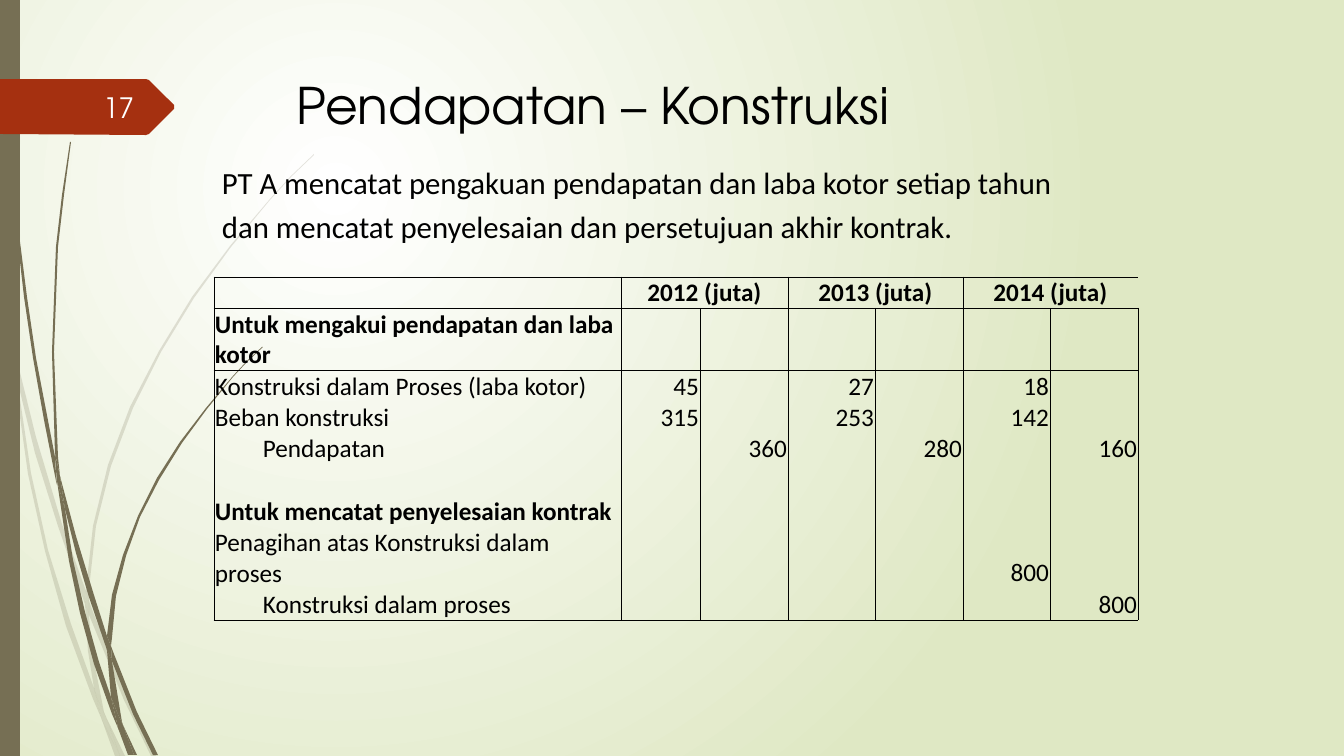
"""Build a slide on construction revenue with a journal table and grass decoration."""
import pptx
import pptx.dml.color
import pptx.enum.shapes
import pptx.enum.text
import pptx.oxml
import pptx.oxml.ns
import pptx.util

PX = 12192000 / 1344
COLORS = {"text": "000000", "white": "FFFFFF", "sage": "DFE8C4", "olive": "766F54", "rust": "A53010"}
HEADING_FONT, BODY_FONT = "TeX Gyre Adventor", "Calibri"
ALIGN = pptx.enum.text.PP_ALIGN
ANCHOR = pptx.enum.text.MSO_ANCHOR
DRAWING = pptx.oxml.ns.nsdecls("a")


def px(*lengths):
    return [pptx.util.Emu(round(length * PX)) for length in lengths]


def format_para(para, size, font, color="text", align=ALIGN.LEFT, bold=False):
    para.alignment = align
    para.font.size = pptx.util.Pt(size)
    para.font.name = font
    para.font.bold = bold
    para.font.color.rgb = pptx.dml.color.RGBColor.from_string(COLORS[color])


deck = pptx.Presentation()
deck.slide_width, deck.slide_height = px(1344, 756)
page = deck.slides.add_slide(deck.slide_layouts[5])

backdrop = page.background.fill
backdrop.gradient()
for stop, color in zip(backdrop.gradient_stops, ("white", "sage")):
    stop.color.rgb = pptx.dml.color.RGBColor.from_string(COLORS[color])
gradient = page.element.xpath(".//p:bg//a:gradFill")[0]
gradient.remove(gradient.xpath("a:lin")[0])
gradient.append(pptx.oxml.parse_xml(
    f'<a:path {DRAWING} path="circle"><a:fillToRect l="50000" t="50000" r="100000" b="100000"/></a:path>'))

PALE_GRASS = [
    [(11, 353), (9, 325), (0, 284), (0, 301), (10, 347)],
    [(58, 526), (85, 604), (86, 591), (62, 524), (36, 437), (14, 348), (17, 379), (35, 453)],
    [(93, 612), (89, 601), (89, 615), (124, 700), (151, 756), (156, 756), (128, 698)],
    [(120, 756), (125, 756), (106, 717)],
    [(94, 688), (71, 624), (48, 550), (31, 473), (17, 379), (11, 353), (28, 474), (45, 551),
     (66, 626), (93, 699), (102, 720), (100, 713)],
    [(85, 604), (88, 651), (94, 688), (97, 698), (106, 717), (104, 712), (92, 651), (89, 615), (89, 613)],
    [(89, 589), (96, 526), (111, 466), (133, 408), (161, 352), (194, 298), (231, 247), (270, 200),
     (292, 176), (314, 155), (314, 154), (291, 176), (270, 199), (230, 246), (192, 297), (159, 351),
     (130, 407), (108, 465), (93, 526), (86, 589), (86, 591), (89, 601)],
    [(102, 720), (115, 756), (120, 756)],
    [(89, 613), (89, 615), (89, 601), (86, 591), (85, 604)],
    [(97, 698), (94, 688), (100, 713), (102, 720), (120, 756), (106, 717)],
]
DARK_GRASS = [
    [(7, 111), (11, 173), (17, 235), (24, 297), (33, 358), (44, 420), (56, 481), (57, 485), (55, 461),
     (55, 457), (36, 358), (27, 297), (19, 234), (13, 172), (8, 110), (5, 48), (4, 0), (3, 0), (4, 48)],
    [(89, 597), (107, 650), (107, 636), (94, 595), (76, 536), (60, 476), (65, 509), (76, 553)],
    [(114, 654), (111, 646), (112, 661), (133, 714), (153, 755), (158, 755), (137, 712)],
    [(111, 697), (99, 662), (85, 612), (73, 560), (65, 509), (57, 481), (69, 561), (80, 613),
     (94, 664), (112, 714), (118, 728), (117, 723)],
    [(60, 476), (58, 457), (54, 352), (58, 247), (64, 195), (71, 142), (70, 142), (62, 195),
     (56, 247), (52, 352), (55, 453)],
    [(134, 755), (137, 755), (123, 725)],
    [(57, 481), (65, 509), (60, 476), (55, 453), (55, 457)],
    [(112, 638), (116, 596), (126, 556), (140, 517), (159, 480), (182, 443), (207, 409), (233, 377),
     (247, 362), (263, 347), (262, 347), (247, 361), (233, 376), (206, 408), (180, 442), (157, 478),
     (138, 516), (123, 555), (112, 595), (107, 636), (111, 646)],
    [(118, 728), (128, 755), (132, 755)],
    [(107, 650), (111, 697), (117, 712), (123, 725), (122, 722), (112, 661), (110, 656)],
    [(107, 650), (110, 656), (112, 661), (111, 646), (107, 636)],
    [(117, 712), (111, 697), (117, 723), (118, 728), (131, 755), (134, 755), (123, 725)],
]
SIDE_BAR = [(0, 0), (20, 0), (20, 756), (0, 756)]
NUMBER_TAG = [(174, 109), (149, 134), (146, 135), (0, 134), (0, 79), (146, 79), (149, 80), (174, 105)]

outlines = [(points, "olive", 20) for points in PALE_GRASS]
outlines += [(points, "olive", 100) for points in DARK_GRASS]
outlines += [(SIDE_BAR, "olive", 100), (NUMBER_TAG, "rust", 100)]
for points, color, opacity in outlines:
    if points is SIDE_BAR:
        shape = page.shapes.add_shape(pptx.enum.shapes.MSO_SHAPE.RECTANGLE, *px(0, 0, 20, 756))
    else:
        builder = page.shapes.build_freeform(*points[0], scale=PX)
        builder.add_line_segments(points[1:], close=True)
        shape = builder.convert_to_shape()
    shape.shadow.inherit = False
    shape.line.fill.background()
    shape.fill.solid()
    shape.fill.fore_color.rgb = pptx.dml.color.RGBColor.from_string(COLORS[color])
    if opacity < 100:
        tint = shape.element.xpath("p:spPr/a:solidFill/a:srgbClr")[0]
        tint.append(pptx.oxml.parse_xml(f'<a:alpha {DRAWING} val="{opacity * 1000}"/>'))

title = page.shapes.title
title.left, title.top, title.width, title.height = px(286, 69, 983, 141)
title.text_frame.text = "Pendapatan – Konstruksi"
title.text_frame.auto_size = pptx.enum.text.MSO_AUTO_SIZE.NONE
title.text_frame.vertical_anchor = ANCHOR.TOP
format_para(title.text_frame.paragraphs[0], 36, HEADING_FONT)

number_box = page.shapes.add_textbox(*px(58, 87, 86, 40))
number_box.text_frame.word_wrap = True
number_box.text_frame.vertical_anchor = ANCHOR.MIDDLE
number_box.text_frame.text = "17"
format_para(number_box.text_frame.paragraphs[0], 20, HEADING_FONT, "white", ALIGN.RIGHT)

intro_box = page.shapes.add_textbox(*px(212, 151, 865, 97))
intro_box.text_frame.word_wrap = True
intro_box.text_frame.text = ("PT A mencatat pengakuan pendapatan dan laba kotor setiap tahun "
                             "dan mencatat penyelesaian dan persetujuan akhir kontrak.")
intro_para = intro_box.text_frame.paragraphs[0]
intro_para.line_spacing = 1.2
format_para(intro_para, 22, BODY_FONT)

JOURNAL = [
    ["", "2012 (juta)", "", "2013 (juta)", "", "2014 (juta)", ""],
    ["Untuk mengakui pendapatan dan laba kotor", "", "", "", "", "", ""],
    ["Konstruksi dalam Proses (laba kotor)", "45", "", "27", "", "18", ""],
    ["Beban konstruksi", "315", "", "253", "", "142", ""],
    ["Pendapatan", "", "360", "", "280", "", "160"],
    ["", "", "", "", "", "", ""],
    ["Untuk mencatat penyelesaian kontrak", "", "", "", "", "", ""],
    ["Penagihan atas Konstruksi dalam proses", "", "", "", "", "800", ""],
    ["Konstruksi dalam proses", "", "", "", "", "", "800"],
]
COLUMN_WIDTHS = [407, 79, 88, 87, 88, 87, 88]
HEADER_ROW, BOLD_ROWS, INDENTED_ROWS, WRAPPED_ROWS = 0, (0, 1, 6), (4, 8), (1, 7)
LAST_ROW = len(JOURNAL) - 1
NO_STYLE = "{2D5ABB26-0587-4C30-8999-92F81FD0307C}"

frame = page.shapes.add_table(len(JOURNAL), len(COLUMN_WIDTHS), *px(214, 277, sum(COLUMN_WIDTHS), 341))
table = frame.table
table.first_row = table.horz_banding = False
frame.element.xpath(".//a:tableStyleId")[0].text = NO_STYLE
for column, width in zip(table.columns, COLUMN_WIDTHS):
    column.width = px(width)[0]
for row_index, entries in enumerate(JOURNAL):
    table.rows[row_index].height = px(62 if row_index in WRAPPED_ROWS else 31)[0]
    for column_index, entry in enumerate(entries):
        cell = table.cell(row_index, column_index)
        cell.text = entry
        cell.vertical_anchor = ANCHOR.BOTTOM
        indent = 49 if column_index == 0 and row_index in INDENTED_ROWS else 1
        cell.margin_left, cell.margin_top, cell.margin_right, cell.margin_bottom = px(indent, 1, 1, 0)
        align = ALIGN.LEFT if column_index == 0 else ALIGN.CENTER if row_index == HEADER_ROW else ALIGN.RIGHT
        format_para(cell.text_frame.paragraphs[0], 18, BODY_FONT, "text", align, row_index in BOLD_ROWS)
        edges = {
            "lnL": column_index in (0, 1, 3, 5),
            "lnR": column_index in (0, 2, 4, 6),
            "lnT": row_index in (HEADER_ROW, HEADER_ROW + 1),
            "lnB": row_index in (HEADER_ROW, LAST_ROW),
        }
        properties = cell._tc.get_or_add_tcPr()
        for edge, shown in edges.items():
            if shown:
                properties.append(pptx.oxml.parse_xml(
                    f'<a:{edge} {DRAWING} w="6350"><a:solidFill><a:srgbClr val="{COLORS["text"]}"/>'
                    f'</a:solidFill></a:{edge}>'))
        cell.fill.background()
for first in (1, 3, 5):
    table.cell(HEADER_ROW, first).merge(table.cell(HEADER_ROW, first + 1))

deck.save("out.pptx")
